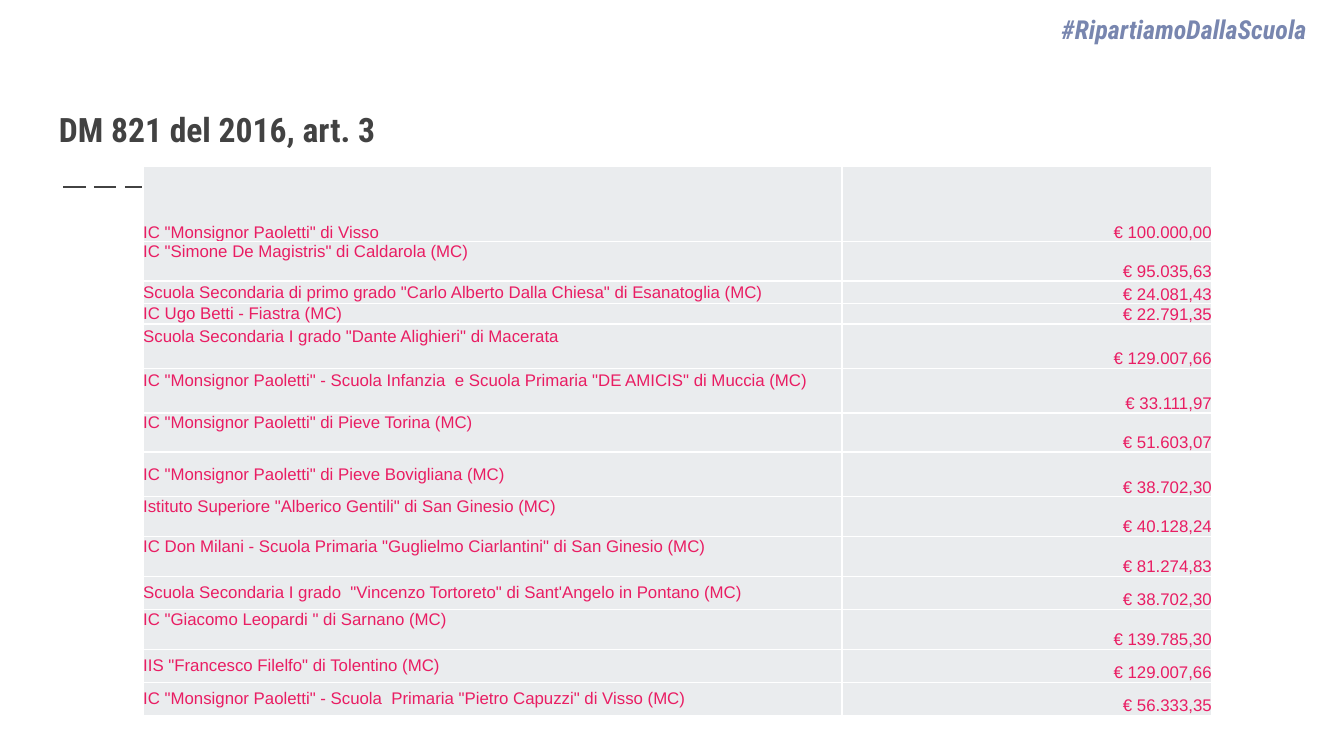
from lxml.etree import SubElement
from pptx import Presentation
from pptx.dml.color import RGBColor
from pptx.enum.dml import MSO_LINE_DASH_STYLE as Dash
from pptx.enum.shapes import MSO_CONNECTOR as Connector
from pptx.enum.text import MSO_ANCHOR as Anchor, PP_ALIGN as Align
from pptx.oxml.ns import qn
from pptx.util import Pt

COLORS = {
    "ink": "424242",
    "hashtag": "7886AF",
    "entry": "E91D63",
    "cell": "EAECEE",
    "border": "FFFFFF",
}
HEADING_FONT = "Roboto Condensed"
LINE_HEIGHT = 10.35

GRANTS = [
    ('IC "Monsignor Paoletti" di Visso', "€ 100.000,00", 40.2, False),
    ('IC "Simone De Magistris" di Caldarola (MC)', "€ 95.035,63", 20.7, True),
    ('Scuola Secondaria di primo grado "Carlo Alberto Dalla Chiesa" di Esanatoglia (MC)',
     "€ 24.081,43", 12, False),
    ("IC Ugo Betti - Fiastra (MC)", "€ 22.791,35", 10.4, False),
    ('Scuola Secondaria I grado "Dante Alighieri" di Macerata', "€ 129.007,66", 23.8, True),
    ('IC "Monsignor Paoletti" - Scuola Infanzia  e Scuola Primaria "DE AMICIS" di Muccia (MC)',
     "€ 33.111,97", 23.8, True),
    ('IC "Monsignor Paoletti" di Pieve Torina (MC)', "€ 51.603,07", 21.2, True),
    ('IC "Monsignor Paoletti" di Pieve Bovigliana (MC)', "€ 38.702,30", 23.8, False),
    ('Istituto Superiore "Alberico Gentili" di San Ginesio (MC)', "€ 40.128,24", 21.4, True),
    ('IC Don Milani - Scuola Primaria "Guglielmo Ciarlantini" di San Ginesio (MC)',
     "€ 81.274,83", 21.4, True),
    ('Scuola Secondaria I grado  "Vincenzo Tortoreto" di Sant\'Angelo in Pontano (MC)',
     "€ 38.702,30", 17.7, False),
    ('IC "Giacomo Leopardi " di Sarnano (MC)', "€ 139.785,30", 21.4, True),
    ('IIS "Francesco Filelfo" di Tolentino (MC)', "€ 129.007,66", 17.7, False),
    ('IC "Monsignor Paoletti" - Scuola  Primaria "Pietro Capuzzi" di Visso (MC)',
     "€ 56.333,35", 17.7, False),
]


def format_font(font, name, size, color):
    font.name = name
    font.size = Pt(size)
    font.color.rgb = RGBColor.from_string(COLORS[color])


prs = Presentation()
prs.slide_width, prs.slide_height = Pt(720), Pt(405)
slide = prs.slides.add_slide(prs.slide_layouts[6])

divider = slide.shapes.add_connector(Connector.STRAIGHT, Pt(33.8), Pt(100.2), Pt(82), Pt(100.2))
divider.line.color.rgb = RGBColor.from_string(COLORS["ink"])
divider.line.width = Pt(1.5)
divider.line.dash_style = Dash.LONG_DASH
SubElement(divider._element.spPr, qn("a:effectLst"))

for text, box, size, color, anchor, italic in [
    ("DM 821 del 2016, art. 3", (24.5, 29.5, 671, 57.6), 18, "ink", Anchor.BOTTOM, False),
    ("#RipartiamoDallaScuola", (561.6, 0, 158.4, 28), 14, "hashtag", Anchor.TOP, True),
]:
    frame = slide.shapes.add_textbox(*map(Pt, box)).text_frame
    frame.word_wrap = True
    frame.vertical_anchor = anchor
    frame.margin_left = frame.margin_right = frame.margin_top = frame.margin_bottom = Pt(7.2)
    frame.text = text
    font = frame.paragraphs[0].runs[0].font
    format_font(font, HEADING_FONT, size, color)
    font.bold = True
    font.italic = italic

total_height = sum(height for _, _, height, _ in GRANTS)
grants = slide.shapes.add_table(
    len(GRANTS), 2, Pt(76.7), Pt(89.3), Pt(572.4), Pt(total_height)).table
grants.first_row = grants.horz_banding = False
grants.columns[0].width, grants.columns[1].width = Pt(374.4), Pt(198)

for index, (school, amount, height, raised) in enumerate(GRANTS):
    grants.rows[index].height = Pt(height)
    for column, text in enumerate((school, amount)):
        cell = grants.cell(index, column)
        cell.margin_left = cell.margin_right = cell.margin_top = cell.margin_bottom = 0
        cell.vertical_anchor = Anchor.BOTTOM if column or index == 0 else Anchor.MIDDLE
        if raised and column == 0:
            cell.margin_bottom = Pt(LINE_HEIGHT)
        properties = cell._tc.get_or_add_tcPr()
        for side in ("a:lnL", "a:lnR", "a:lnT", "a:lnB"):
            border = SubElement(properties, qn(side), w=str(Pt(1)))
            paint = SubElement(border, qn("a:solidFill"))
            SubElement(paint, qn("a:srgbClr"), val=COLORS["border"])
        cell.fill.solid()
        cell.fill.fore_color.rgb = RGBColor.from_string(COLORS["cell"])
        cell.text_frame.text = text
        paragraph = cell.text_frame.paragraphs[0]
        paragraph.alignment = Align.RIGHT if column else Align.LEFT
        format_font(paragraph.runs[0].font, "Arial", 9, "entry")

prs.save("out.pptx")
